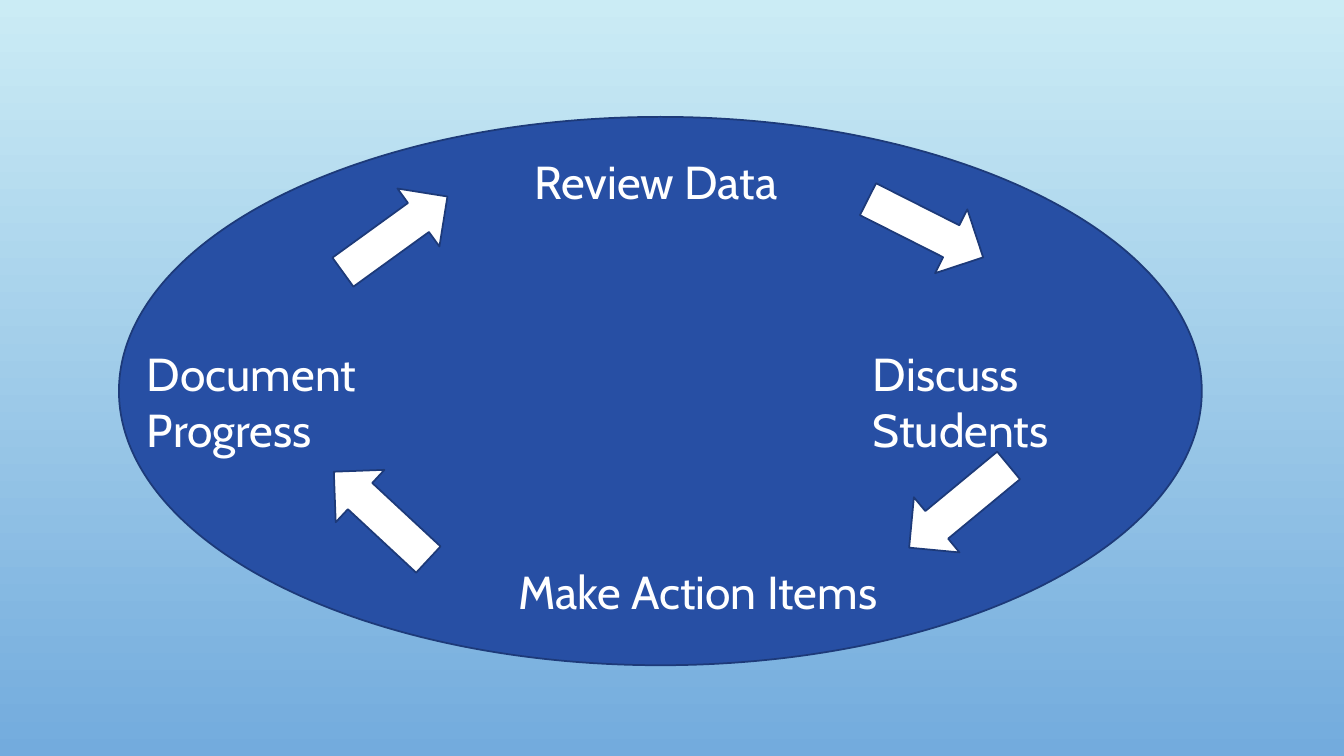
from dataclasses import dataclass

from pptx import Presentation
from pptx.dml.color import RGBColor
from pptx.enum import shapes, text
from pptx.util import Inches, Pt

WHITE, BLUE, NAVY = "FFFFFF", "274FA4", "1D3A79"
SKY_TOP, SKY_BOTTOM = "CBECF5", "73ABDD"
ARROW_WIDTH, ARROW_HEIGHT = 1.28, 0.71


@dataclass
class Step:
    label: str
    left: float
    top: float
    width: float


@dataclass
class Arrow:
    left: float
    top: float
    rotation: float


STEPS = [
    Step("Review Data", 5.2, 1.47, 2.7),
    Step("Discuss Students", 8.56, 3.38, 3.2),
    Step("Make Action Items", 5.04, 5.54, 3.84),
    Step("Document Progress", 1.36, 3.38, 3.84),
]
ARROWS = [
    Arrow(8.54, 1.91, 26.8),
    Arrow(8.87, 4.67, 140.4),
    Arrow(3.14, 4.76, 222.9),
    Arrow(3.28, 1.97, 324.1),
]


def rgb(value: str) -> RGBColor:
    return RGBColor.from_string(value)


def paint_background(page) -> None:
    fill = page.background.fill
    fill.gradient()
    fill.gradient_angle = 270
    for stop, color in zip(fill.gradient_stops, (SKY_TOP, SKY_BOTTOM)):
        stop.color.rgb = rgb(color)


def add_outlined(page, kind, left: float, top: float, width: float,
                 height: float, color: str):
    shape = page.shapes.add_shape(
        kind, Inches(left), Inches(top), Inches(width), Inches(height))
    shape.shadow.inherit = False
    shape.fill.solid()
    shape.fill.fore_color.rgb = rgb(color)
    shape.line.color.rgb = rgb(NAVY)
    shape.line.width = Pt(1.25)
    return shape


def add_step(page, step: Step) -> None:
    box = page.shapes.add_textbox(
        Inches(step.left), Inches(step.top), Inches(step.width), Inches(0.66))
    frame = box.text_frame
    frame.word_wrap = True
    frame.auto_size = text.MSO_AUTO_SIZE.SHAPE_TO_FIT_TEXT
    para = frame.paragraphs[0]
    para.text = step.label
    para.font.name = "Cabin"
    para.font.size = Pt(33)
    para.font.color.rgb = rgb(WHITE)


def add_arrow(page, arrow: Arrow) -> None:
    shape = add_outlined(page, shapes.MSO_SHAPE.RIGHT_ARROW, arrow.left,
                         arrow.top, ARROW_WIDTH, ARROW_HEIGHT, WHITE)
    shape.rotation = arrow.rotation


def main() -> None:
    deck = Presentation()
    deck.slide_width, deck.slide_height = Inches(13.33), Inches(7.5)
    page = deck.slides.add_slide(deck.slide_layouts[6])
    paint_background(page)
    add_outlined(page, shapes.MSO_SHAPE.OVAL, 1.18, 1.16, 10.74, 5.44, BLUE)
    for step in STEPS:
        add_step(page, step)
    for arrow in ARROWS:
        add_arrow(page, arrow)
    deck.save("out.pptx")


if __name__ == "__main__":
    main()
